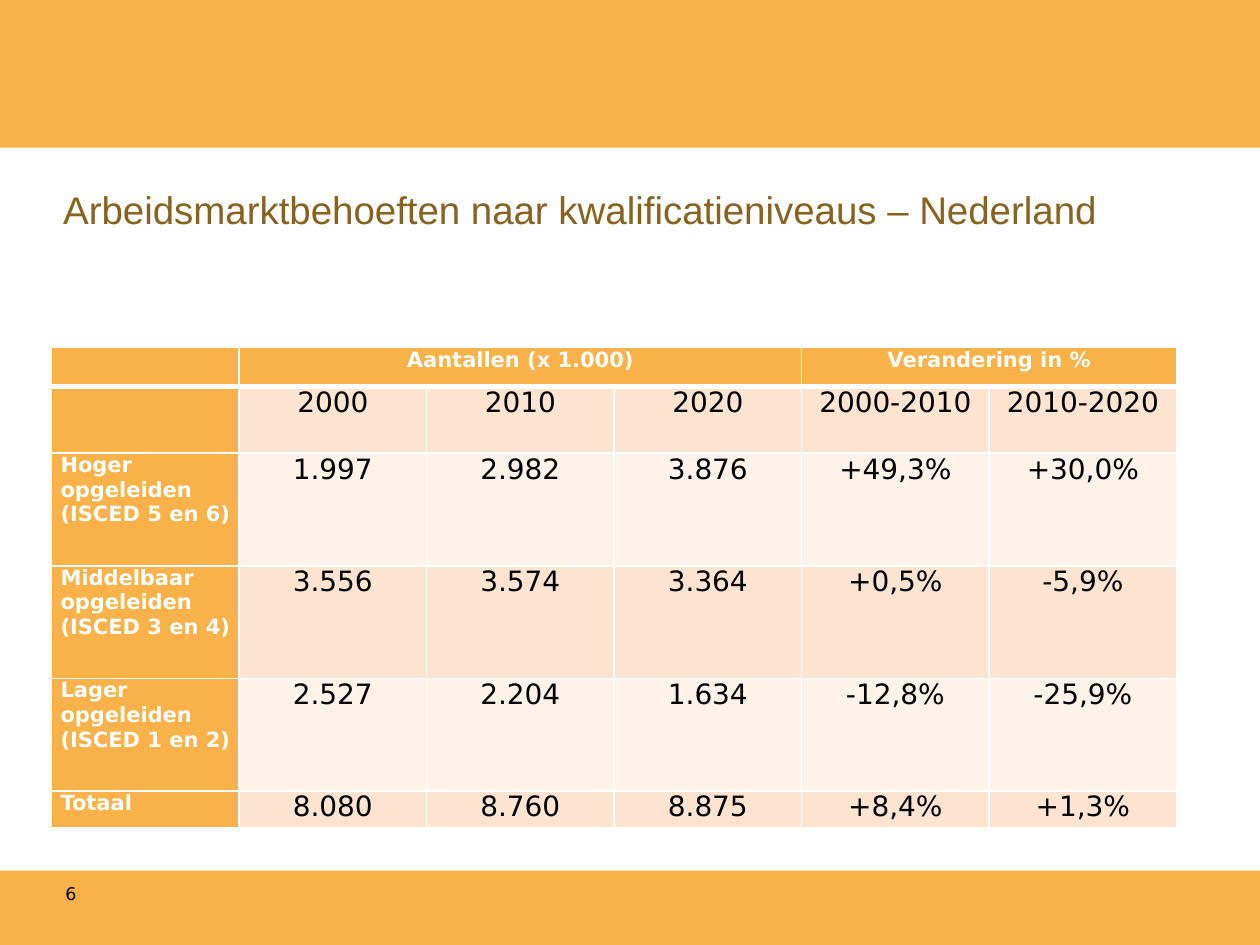
from dataclasses import dataclass

from lxml import etree
from pptx import Presentation
from pptx.dml.color import RGBColor
from pptx.enum.shapes import MSO_SHAPE
from pptx.enum.text import MSO_ANCHOR, PP_ALIGN
from pptx.oxml.ns import qn
from pptx.util import Cm, Pt

RECTANGLE = MSO_SHAPE.RECTANGLE
MIDDLE = MSO_ANCHOR.MIDDLE
LEFT, CENTER = PP_ALIGN.LEFT, PP_ALIGN.CENTER
ORANGE, PEACH, CREAM = "F9B249", "FDE4D0", "FEF2E9"
WHITE, BLACK, BROWN = "FFFFFF", "000000", "876220"
TABLE_FONT = "DejaVu Sans"
COLUMN_WIDTH = 3.78
THIN, THICK = 1, 3


@dataclass
class Band:
    top: float
    height: float


@dataclass
class Row:
    height: float
    texts: list[str]


@dataclass
class TextStyle:
    size: float
    color: str
    font: str = TABLE_FONT
    bold: bool = False
    align: PP_ALIGN = LEFT


BANDS = [Band(0, 2.98), Band(17.55, 1.5)]
ROWS = [
    Row(0.75, ["", "Aantallen (x 1.000)", "", "", "Verandering in %", ""]),
    Row(1.35, ["", "2000", "2010", "2020", "2000-2010", "2010-2020"]),
    Row(2.27, ["Hoger\nopgeleiden\n(ISCED 5 en 6)",
               "1.997", "2.982", "3.876", "+49,3%", "+30,0%"]),
    Row(2.27, ["Middelbaar opgeleiden\n(ISCED 3 en 4)",
               "3.556", "3.574", "3.364", "+0,5%", "-5,9%"]),
    Row(2.27, ["Lager opgeleiden\n(ISCED 1 en 2)",
               "2.527", "2.204", "1.634", "-12,8%", "-25,9%"]),
    Row(0.75, ["Totaal", "8.080", "8.760", "8.875", "+8,4%", "+1,3%"]),
]
HEADER_SPANS = [(1, 3), (4, 5)]
TITLE_STYLE = TextStyle(22, BROWN, "Arial")
NUMBER_STYLE = TextStyle(10, BLACK)
HEADER_STYLE = TextStyle(12, WHITE, bold=True, align=CENTER)
LABEL_STYLE = TextStyle(12, WHITE, bold=True)
VALUE_STYLE = TextStyle(16, BLACK, align=CENTER)


def rgb(value: str) -> RGBColor:
    return RGBColor.from_string(value)


def write(frame, text: str, style: TextStyle) -> None:
    frame.text = text
    for paragraph in frame.paragraphs:
        paragraph.alignment = style.align
        for span in paragraph.runs:
            span.font.size = Pt(style.size)
            span.font.name = style.font
            span.font.bold = style.bold
            span.font.color.rgb = rgb(style.color)


def draw_band(page, band: Band, width: int) -> None:
    shape = page.shapes.add_shape(RECTANGLE, 0, Cm(band.top), width, Cm(band.height))
    shape.shadow.inherit = False
    shape.fill.solid()
    shape.fill.fore_color.rgb = rgb(ORANGE)
    shape.line.fill.background()


def add_borders(cell, top: float, bottom: float) -> None:
    properties = cell._tc.get_or_add_tcPr()
    widths = {"lnL": THIN, "lnR": THIN, "lnT": top, "lnB": bottom}
    for side, width in widths.items():
        line = etree.SubElement(properties, qn(f"a:{side}"), w=str(Pt(width)))
        fill = etree.SubElement(line, qn("a:solidFill"))
        etree.SubElement(fill, qn("a:srgbClr"), val=WHITE)


def format_cell(cell, text: str, row: int, column: int) -> None:
    if row == 0:
        style, color = HEADER_STYLE, ORANGE
    elif column == 0:
        style, color = LABEL_STYLE, ORANGE
    else:
        style, color = VALUE_STYLE, PEACH if row % 2 else CREAM
    cell.margin_left = cell.margin_right = Cm(0.18)
    cell.margin_top = cell.margin_bottom = 0
    add_borders(cell, THICK if row == 1 else THIN, THICK if row == 0 else THIN)
    cell.fill.solid()
    cell.fill.fore_color.rgb = rgb(color)
    if text:
        write(cell.text_frame, text, style)


def draw_table(page, rows: list[Row]) -> None:
    column_count = len(rows[0].texts)
    table = page.shapes.add_table(
        len(rows), column_count, Cm(1.04), Cm(7.01),
        Cm(COLUMN_WIDTH * column_count), Cm(sum(row.height for row in rows)),
    ).table
    table.first_row = table.horz_banding = False
    for column in table.columns:
        column.width = Cm(COLUMN_WIDTH)
    for row_index, row in enumerate(rows):
        table.rows[row_index].height = Cm(row.height)
        for column_index, text in enumerate(row.texts):
            format_cell(table.cell(row_index, column_index), text, row_index, column_index)
    for first, last in HEADER_SPANS:
        table.cell(0, first).merge(table.cell(0, last))


def main() -> None:
    deck = Presentation()
    deck.slide_width, deck.slide_height = Cm(25.4), Cm(19.05)
    page = deck.slides.add_slide(deck.slide_layouts[5])
    for band in BANDS:
        draw_band(page, band, deck.slide_width)

    title = page.shapes.title
    title.left, title.top = Cm(1.02), Cm(3.43)
    title.width, title.height = Cm(22.68), Cm(1.57)
    title.text_frame.vertical_anchor = MIDDLE
    write(title.text_frame, "Arbeidsmarktbehoeften naar kwalificatieniveaus – Nederland", TITLE_STYLE)

    draw_table(page, ROWS)

    number = page.shapes.add_textbox(Cm(1.07), Cm(17.68), Cm(1.98), Cm(1.02))
    number.text_frame.word_wrap = True
    write(number.text_frame, "6", NUMBER_STYLE)

    deck.save("out.pptx")


if __name__ == "__main__":
    main()
